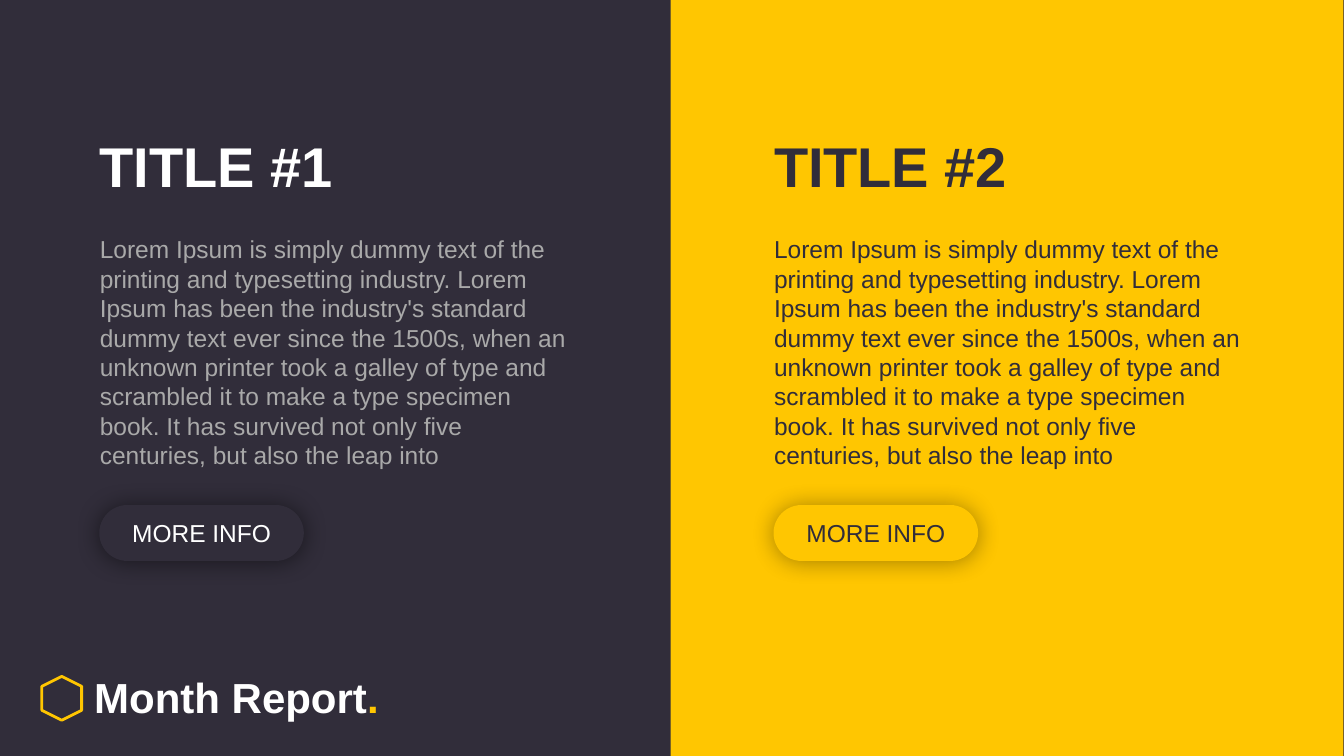
from lxml.etree import SubElement
from pptx import Presentation
from pptx.dml.color import RGBColor
from pptx.enum.shapes import MSO_SHAPE
from pptx.enum.text import MSO_ANCHOR, MSO_AUTO_SIZE, PP_ALIGN
from pptx.oxml.ns import qn
from pptx.util import Inches, Pt

DARK = RGBColor(0x31, 0x2D, 0x3A)
YELLOW = RGBColor(0xFF, 0xC6, 0x01)
WHITE = RGBColor(0xFF, 0xFF, 0xFF)
GREY = RGBColor(0xA9, 0xA9, 0xA9)

LOREM = (
    "Lorem Ipsum is simply dummy text of the printing and typesetting industry. "
    "Lorem Ipsum has been the industry's standard dummy text ever since the 1500s, "
    "when an unknown printer took a galley of type and scrambled it to make a type "
    "specimen book. It has survived not only five centuries, but also the leap into"
)


class Deck:
    font = "Arial"
    title_size = 80
    body_size = 35
    brand_size = 60
    inset = Inches(0.06)

    def __init__(self, slide):
        self.s = slide

    def background(self, color):
        fill = self.s.background.fill
        fill.solid()
        fill.fore_color.rgb = color

    def shape(self, kind, x, y, w, h, fill=None):
        sp = self.s.shapes.add_shape(kind, Inches(x), Inches(y), Inches(w), Inches(h))
        sp.shadow.inherit = False
        sp.line.fill.background()
        if fill is None:
            sp.fill.background()
        else:
            sp.fill.solid()
            sp.fill.fore_color.rgb = fill
        return sp

    def format(self, sp, size, colors, bold=False, align=PP_ALIGN.LEFT,
               anchor=MSO_ANCHOR.TOP, wrap=True):
        tf = sp.text_frame
        tf.word_wrap = wrap
        tf.auto_size = MSO_AUTO_SIZE.NONE
        tf.vertical_anchor = anchor
        tf.margin_left = tf.margin_right = tf.margin_top = tf.margin_bottom = self.inset
        p = tf.paragraphs[0]
        p.alignment = align
        p.line_spacing = Pt(size * 1.2)
        for r, color in zip(p.runs, colors):
            r.font.name = self.font
            r.font.size = Pt(size)
            r.font.bold = bold
            r.font.color.rgb = color

    def textbox(self, text, x, y, w, h):
        sp = self.s.shapes.add_textbox(Inches(x), Inches(y), Inches(w), Inches(h))
        sp.text_frame.text = text
        return sp

    def title(self, text, x, color):
        sp = self.s.shapes.title
        sp.left, sp.top, sp.width, sp.height = map(Inches, (x, 2.54, 10.33, 1.88))
        sp.text_frame.text = text
        self.format(sp, self.title_size, [color], bold=True)

    def heading(self, text, x, color):
        sp = self.textbox(text, x, 2.54, 10.33, 1.88)
        self.format(sp, self.title_size, [color], bold=True)

    def body(self, text, x, color):
        sp = self.textbox(text, x, 4.59, 9.39, 5.22)
        self.format(sp, self.body_size, [color])

    def button(self, text, x, fill, color, shadow_alpha):
        sp = self.shape(MSO_SHAPE.ROUNDED_RECTANGLE, x, 10.02, 4.06, 1.11, fill)
        sp.adjustments[0] = 0.5
        effects = sp._element.spPr.find(qn("a:effectLst"))
        shadow = SubElement(effects, qn("a:outerShdw"), blurRad=str(Pt(35)),
                            dist=str(Pt(2)), dir="5400000", rotWithShape="0")
        black = SubElement(shadow, qn("a:srgbClr"), val="000000")
        SubElement(black, qn("a:alpha"), val=str(shadow_alpha * 1000))
        label = self.textbox(text, x + 0.02, 10.22, 4.02, 0.89)
        self.format(label, self.body_size, [color], align=PP_ALIGN.CENTER)

    def brand(self, name, mark):
        sp = self.shape(MSO_SHAPE.HEXAGON, 0.79, 13.46, 0.87, 0.79)
        sp.rotation = 90
        sp.line.color.rgb = YELLOW
        sp.line.width = Pt(4)
        label = self.textbox(name, 1.81, 13.26, 5.81, 1.12)
        label.text_frame.paragraphs[0].add_run().text = mark
        self.format(label, self.brand_size, [WHITE, YELLOW], bold=True,
                    anchor=MSO_ANCHOR.MIDDLE, wrap=False)


def main():
    prs = Presentation()
    prs.slide_width = Inches(26.67)
    prs.slide_height = Inches(15)
    deck = Deck(prs.slides.add_slide(prs.slide_layouts[5]))

    deck.background(DARK)
    deck.brand("Month Report", ".")
    deck.shape(MSO_SHAPE.RECTANGLE, 13.31, 0, 13.35, 15, YELLOW)

    deck.title("TITLE #1", 1.92, WHITE)
    deck.heading("TITLE #2", 15.3, DARK)
    for x, fill, body_color, label_color, alpha in (
        (1.92, DARK, GREY, WHITE, 50),
        (15.3, YELLOW, DARK, DARK, 36),
    ):
        deck.body(LOREM, x, body_color)
        deck.button("MORE INFO", x + 0.05, fill, label_color, alpha)

    prs.save("out.pptx")


if __name__ == "__main__":
    main()
